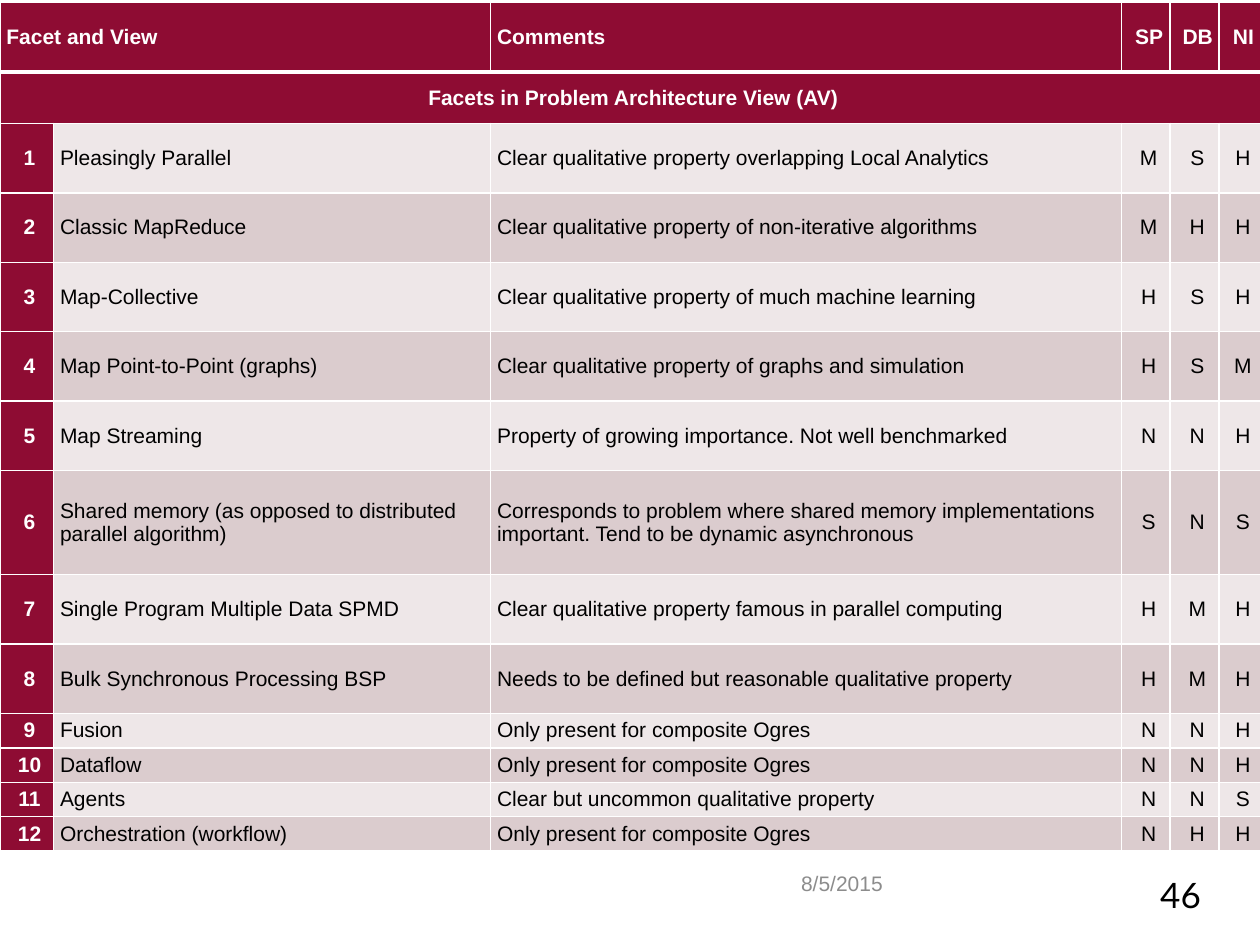
import pptx
import pptx.dml.color
import pptx.enum.text
import pptx.oxml.ns
import pptx.util
from lxml import etree

Cm = pptx.util.Cm
Pt = pptx.util.Pt
ALIGN = pptx.enum.text.PP_ALIGN
ANCHOR = pptx.enum.text.MSO_ANCHOR

MAROON, WHITE, BLACK, GREY = "8E0C33", "FFFFFF", "000000", "8C8C8C"
STRIPES = ("EEE7E8", "DBCCCE")

COLUMN_WIDTHS = (1.08, 8.81, 12.72, 0.98, 0.98, 0.86)
HEADER_HEIGHT, SECTION_HEIGHT = 1.4, 1.04
TALL, DOUBLE, SHORT = 1.4, 2.1, 0.695

SECTION = "Facets in Problem Architecture View (AV)"
HEADINGS = ("Facet and View", "", "Comments", "SP", "DB", "NI")

# Row height, facet, comment, ratings for SP, DB and NI
FACETS = (
    (TALL, "Pleasingly Parallel",
     "Clear qualitative property overlapping Local Analytics", "MSH"),
    (TALL, "Classic MapReduce",
     "Clear qualitative property of non-iterative algorithms", "MHH"),
    (TALL, "Map-Collective",
     "Clear qualitative property of much machine learning", "HSH"),
    (TALL, "Map Point-to-Point (graphs)",
     "Clear qualitative property of graphs and simulation", "HSM"),
    (TALL, "Map Streaming",
     "Property of growing importance. Not well benchmarked", "NNH"),
    (DOUBLE, "Shared memory (as opposed to distributed parallel algorithm)",
     "Corresponds to problem where shared memory implementations important. "
     "Tend to be dynamic asynchronous", "SNS"),
    (TALL, "Single Program Multiple Data SPMD",
     "Clear qualitative property famous in parallel computing", "HMH"),
    (TALL, "Bulk Synchronous Processing BSP",
     "Needs to be defined but reasonable qualitative property", "HMH"),
    (SHORT, "Fusion", "Only present for composite Ogres", "NNH"),
    (SHORT, "Dataflow", "Only present for composite Ogres", "NNH"),
    (SHORT, "Agents", "Clear but uncommon qualitative property", "NNS"),
    (SHORT, "Orchestration (workflow)", "Only present for composite Ogres", "NHH"),
)


def color(value):
    return pptx.dml.color.RGBColor.from_string(value)


def set_format(target, values):
    for name, value in values.items():
        setattr(target, name, value)


def write_text(frame, text, size, font, ink, bold=False, align=ALIGN.LEFT):
    para = frame.paragraphs[0]
    para.alignment = align
    span = para.add_run()
    span.text = text
    set_format(span.font, {"size": Pt(size), "name": font, "bold": bold})
    span.font.color.rgb = color(ink)


def add_label(page, left, top, width, height, text, size, font, ink, anchor):
    box = page.shapes.add_textbox(Cm(left), Cm(top), Cm(width), Cm(height))
    set_format(box.text_frame, {"word_wrap": True, "vertical_anchor": anchor})
    write_text(box.text_frame, text, size, font, ink)


def set_borders(cell, top=1, bottom=1):
    properties = cell._tc.get_or_add_tcPr()
    qn = pptx.oxml.ns.qn
    for side, width in (("L", 1), ("R", 1), ("T", top), ("B", bottom)):
        line = etree.SubElement(properties, qn(f"a:ln{side}"), w=str(Pt(width)))
        fill = etree.SubElement(line, qn("a:solidFill"))
        etree.SubElement(fill, qn("a:srgbClr"), val=WHITE)


def fill_cell(cell, text, fill, ink, bold, align, right=0.02, top=1, bottom=1):
    set_borders(cell, top, bottom)
    set_format(cell, {
        "margin_left": Cm(0.13), "margin_right": Cm(right),
        "margin_top": 0, "margin_bottom": 0,
        "vertical_anchor": ANCHOR.MIDDLE,
    })
    cell.fill.solid()
    cell.fill.fore_color.rgb = color(fill)
    if text:
        write_text(cell.text_frame, text, 12, "Arial", ink, bold, align)


def add_facet_table(page):
    heights = [HEADER_HEIGHT, SECTION_HEIGHT] + [facet[0] for facet in FACETS]
    table = page.shapes.add_table(
        len(heights), len(COLUMN_WIDTHS), 0, Cm(0.05),
        Cm(sum(COLUMN_WIDTHS)), Cm(sum(heights))).table
    for column, width in zip(table.columns, COLUMN_WIDTHS):
        column.width = Cm(width)
    for row, height in zip(table.rows, heights):
        row.height = Cm(height)

    # Heading and section rows
    table.cell(0, 0).merge(table.cell(0, 1))
    table.cell(1, 0).merge(table.cell(1, len(COLUMN_WIDTHS) - 1))
    for index, heading in enumerate(HEADINGS):
        rating = index > 2
        fill_cell(table.cell(0, index), heading, MAROON, WHITE, True,
                  ALIGN.CENTER if rating else ALIGN.LEFT,
                  right=0 if rating else 0.02, bottom=3)
        fill_cell(table.cell(1, index), "" if index else SECTION,
                  MAROON, WHITE, True, ALIGN.CENTER, top=3)

    # Numbered facets in alternating stripes
    for number, (_, facet, comment, ratings) in enumerate(FACETS, start=1):
        stripe = STRIPES[(number - 1) % 2]
        for index, text in enumerate((str(number), facet, comment, *ratings)):
            first = index == 0
            fill_cell(table.cell(number + 1, index), text,
                      MAROON if first else stripe, WHITE if first else BLACK,
                      first, ALIGN.LEFT if index in (1, 2) else ALIGN.CENTER)


def main():
    deck = pptx.Presentation()
    set_format(deck, {"slide_width": Cm(25.4), "slide_height": Cm(19.05)})
    page = deck.slides.add_slide(deck.slide_layouts[6])

    # Page number and date
    add_label(page, 23.14, 17.48, 1.83, 0.81, "46", 20, "Lato", BLACK, ANCHOR.TOP)
    add_label(page, 15.9, 17.3, 5.72, 1.02, "8/5/2015", 12, "Arial", GREY,
              ANCHOR.MIDDLE)

    add_facet_table(page)
    deck.save("out.pptx")


if __name__ == "__main__":
    main()
